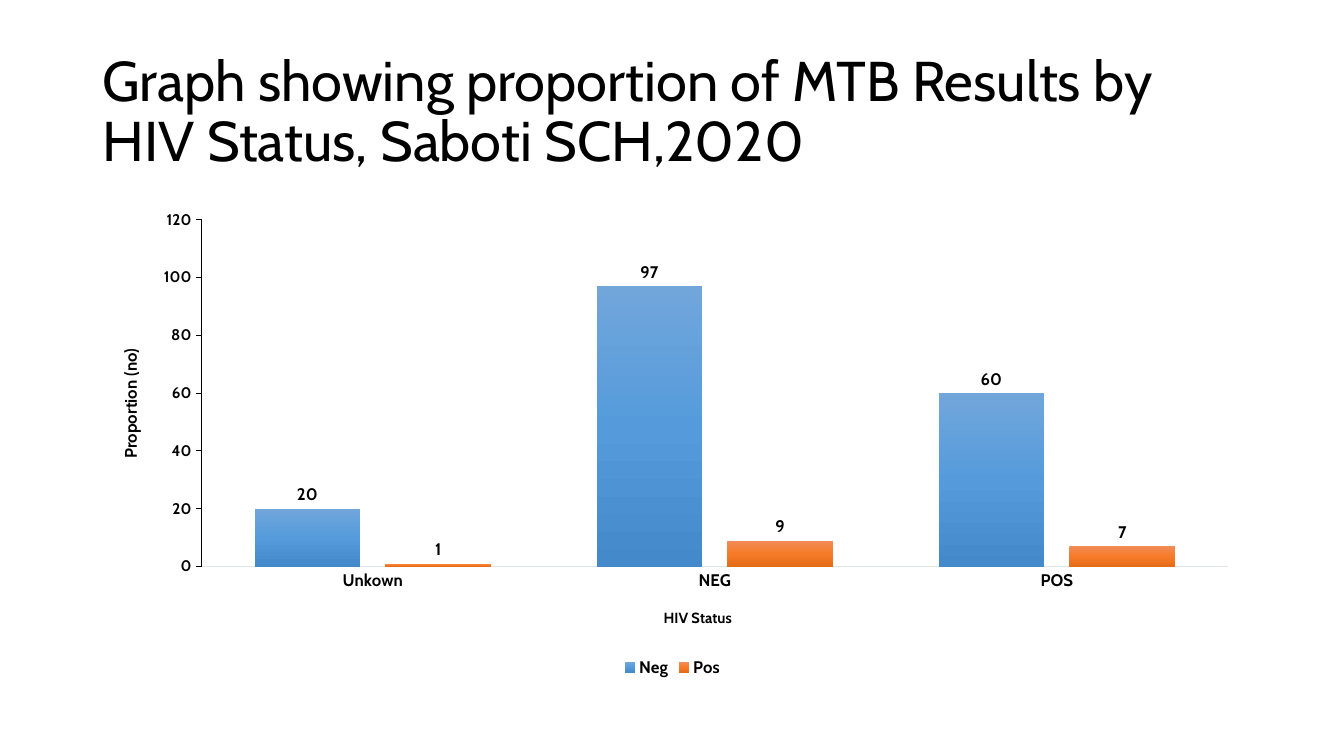
from copy import deepcopy
from dataclasses import dataclass

from pptx import Presentation
from pptx.chart.data import CategoryChartData
from pptx.dml.color import RGBColor
from pptx.enum.chart import XL_CHART_TYPE, XL_LABEL_POSITION, XL_LEGEND_POSITION, XL_TICK_MARK
from pptx.enum.text import MSO_ANCHOR
from pptx.oxml import parse_xml
from pptx.oxml.ns import nsdecls, qn
from pptx.util import Inches, Pt


@dataclass(frozen=True)
class Theme:
    font: str = "Cabin"
    text: str = "000000"
    base_line: str = "E0E5EB"
    neg: tuple = ("71A6DB", "559BDB", "448ACA")
    pos: tuple = ("F18C57", "F67B28", "E56C19")
    title_size: float = 40
    label_size: float = 12
    value_size: float = 11
    category_title_size: float = 10.5


def style_font(font, theme, size, bold=False):
    font.name = theme.font
    font.size = Pt(size)
    font.bold = bold
    font.color.rgb = RGBColor.from_string(theme.text)


def add_text(tf, text, theme, size, bold=False, line_spacing=None):
    p = tf.paragraphs[0]
    p.line_spacing = line_spacing
    r = p.add_run()
    r.text = text
    style_font(r.font, theme, size, bold)


def manual_layout(x, y, w=None, h=None, inner=False):
    """Return a c:layout placing a chart part by fractions of the chart area."""
    parts = [("layoutTarget", "inner")] if inner else []
    parts += [("xMode", "edge"), ("yMode", "edge")]
    parts += [(k, v) for k, v in zip("xywh", (x, y, w, h)) if v is not None]
    body = "".join(f'<c:{k} val="{v}"/>' for k, v in parts)
    return parse_xml(f'<c:layout {nsdecls("c")}><c:manualLayout>{body}</c:manualLayout></c:layout>')


def set_layout(parent, layout, index):
    for old in parent.findall(qn("c:layout")):
        parent.remove(old)
    parent.insert(index, layout)


class ChartSlide:
    def __init__(self, prs, theme):
        self.theme = theme
        self.slide = prs.slides.add_slide(prs.slide_layouts[6])

    def title(self, text, x, y, w, h):
        box = self.slide.shapes.add_textbox(Inches(x), Inches(y), Inches(w), Inches(h))
        tf = box.text_frame
        tf.word_wrap = True
        tf.vertical_anchor = MSO_ANCHOR.MIDDLE
        add_text(tf, text, self.theme, self.theme.title_size, line_spacing=0.9)

    def column_chart(self, categories, series, x, y, w, h):
        data = CategoryChartData()
        data.categories = categories
        for name, values, _ in series:
            data.add_series(name, values)
        frame = self.slide.shapes.add_chart(
            XL_CHART_TYPE.COLUMN_CLUSTERED, Inches(x), Inches(y), Inches(w), Inches(h), data)
        chart = frame.chart
        style_font(chart.font, self.theme, self.theme.label_size)
        chart.has_title = False
        plot = chart.plots[0]
        plot.gap_width, plot.overlap, plot.vary_by_categories = 100, -24, False
        for ser, (_, _, colors) in zip(plot.series, series):
            self.gradient(ser.format.fill, ser, colors)
            self.data_labels(ser)
        chart.has_legend = True
        chart.legend.position = XL_LEGEND_POSITION.BOTTOM
        chart.legend.include_in_layout = False
        style_font(chart.legend.font, self.theme, self.theme.label_size, bold=True)
        plot_area = chart.plots[0]._element.getparent()
        set_layout(plot_area, manual_layout(0.094, 0.038, 0.885, 0.723, inner=True), 0)
        return chart

    def gradient(self, fill, ser, colors):
        """Fill a series from top to bottom with evenly spaced colours."""
        fill.gradient()
        fill.gradient_angle = 270
        stops = next(ser._element.iter(qn("a:gsLst")))
        for _ in range(len(colors) - len(stops)):
            stops.append(deepcopy(stops[0]))
        for i, (stop, color) in enumerate(zip(fill.gradient_stops, colors)):
            stop.position = i / (len(colors) - 1)
            stop.color.rgb = RGBColor.from_string(color)

    def data_labels(self, ser):
        labels = ser.data_labels
        labels.show_value = True
        labels.position = XL_LABEL_POSITION.OUTSIDE_END
        style_font(labels.font, self.theme, self.theme.label_size, bold=True)

    def axis(self, axis, title, title_at, title_size, tick_size, tick, line):
        axis.has_major_gridlines = False
        axis.major_tick_mark, axis.minor_tick_mark = tick, XL_TICK_MARK.NONE
        axis.format.line.color.rgb = RGBColor.from_string(line)
        axis.format.line.width = Pt(0.75)
        style_font(axis.tick_labels.font, self.theme, tick_size, bold=True)
        add_text(axis.axis_title.text_frame, title, self.theme, title_size, bold=True)
        set_layout(axis.axis_title._element, manual_layout(*title_at), 1)


def main():
    prs = Presentation()
    prs.slide_width, prs.slide_height = Inches(13.33), Inches(7.5)
    theme = Theme()
    s = ChartSlide(prs, theme)
    s.title("Graph showing proportion of MTB Results by HIV Status, Saboti SCH,2020",
            0.92, 0.4, 11.5, 1.45)
    chart = s.column_chart(
        ["Unkown", "NEG", "POS"],
        [("Neg", (20, 97, 60), theme.neg), ("Pos", (1, 9, 7), theme.pos)],
        0.92, 2, 11.5, 4.76)
    s.axis(chart.category_axis, "HIV Status", (0.49, 0.84), theme.category_title_size,
           theme.label_size, XL_TICK_MARK.NONE, theme.base_line)
    s.axis(chart.value_axis, "Proportion (no)", (0.02, 0.3), theme.label_size,
           theme.value_size, XL_TICK_MARK.OUTSIDE, theme.text)
    chart.value_axis.minimum_scale, chart.value_axis.maximum_scale = 0, 120
    chart.value_axis.major_unit = 20
    prs.save("out.pptx")


if __name__ == "__main__":
    main()
